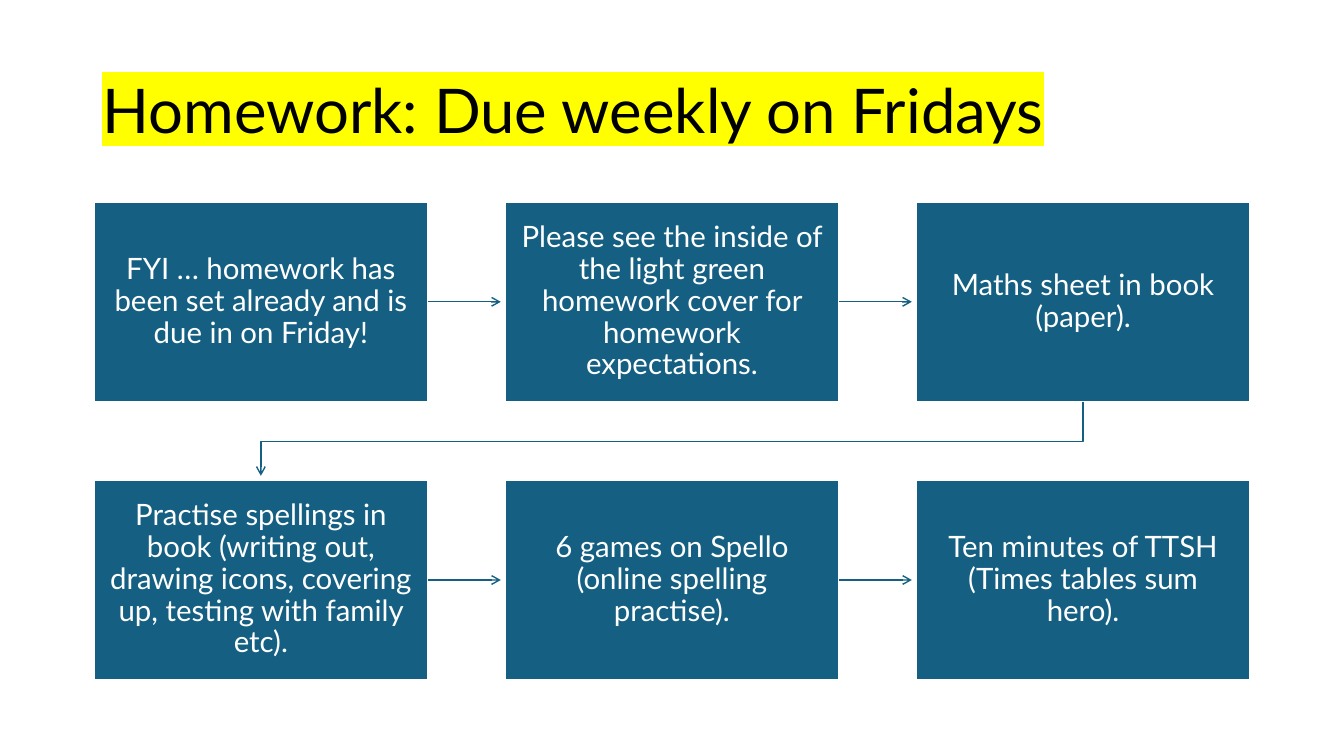
import pptx
import pptx.util
import pptx.dml.color
import pptx.enum.shapes
import pptx.enum.text
import pptx.oxml
import pptx.oxml.ns

Cm, Pt = pptx.util.Cm, pptx.util.Pt
RGBColor = pptx.dml.color.RGBColor
ALIGN = pptx.enum.text.PP_ALIGN
BLUE = RGBColor(0x15, 0x60, 0x82)
WHITE = RGBColor(0xFF, 0xFF, 0xFF)
BLACK = RGBColor(0, 0, 0)
YELLOW = RGBColor(0xFF, 0xFF, 0)
NS = pptx.oxml.ns.nsdecls("a")

# Grid of step boxes, in cm
LEFT, TOP = 2.36, 5.08
WIDE, HIGH = 8.43, 5.05
STEP_X, STEP_Y = 10.36, 7.01
COLS = 3
GAP = 0.1  # space between an arrow tip and its box

STEPS = [
    "FYI … homework has been set already and is due in on Friday!",
    "Please see the inside of the light green homework cover for homework expectations.",
    "Maths sheet in book (paper).",
    "Practise spellings in book (writing out, drawing icons, covering up, testing with family etc).",
    "6 games on Spello (online spelling practise).",
    "Ten minutes of TTSH (Times tables sum hero).",
]


def add_text(shape, text, size, color, align):
    frame = shape.text_frame
    frame.word_wrap = True
    frame.vertical_anchor = pptx.enum.text.MSO_ANCHOR.MIDDLE
    para = frame.paragraphs[0]
    para.alignment = align
    para.line_spacing = 0.9
    run = para.add_run()
    run.text = text
    run.font.name = "Lato"
    run.font.size = Pt(size)
    run.font.color.rgb = color
    return frame


def add_tip(line):
    line.line.color.rgb = BLUE
    line.line.width = Pt(1)
    props = line.element.spPr
    props.get_or_add_ln().append(pptx.oxml.parse_xml(f'<a:tailEnd {NS} type="arrow"/>'))
    props.append(pptx.oxml.parse_xml(f"<a:effectLst {NS}/>"))


deck = pptx.Presentation()
deck.slide_width, deck.slide_height = Cm(33.87), Cm(19.05)
slide = deck.slides.add_slide(deck.slide_layouts[6])
shapes = slide.shapes

# Title with highlight
title = shapes.add_textbox(Cm(2.33), Cm(1.01), Cm(29.21), Cm(3.68))
add_text(title, "Homework: Due weekly on Fridays", 44, BLACK, ALIGN.LEFT)
mark = f'<a:highlight {NS}><a:srgbClr val="{YELLOW}"/></a:highlight>'
title.element.xpath(".//a:latin")[0].addprevious(pptx.oxml.parse_xml(mark))

# Step boxes
boxes = []
for i, text in enumerate(STEPS):
    row, col = divmod(i, COLS)
    box = shapes.add_shape(
        pptx.enum.shapes.MSO_SHAPE.RECTANGLE,
        Cm(LEFT + col * STEP_X), Cm(TOP + row * STEP_Y), Cm(WIDE), Cm(HIGH))
    box.shadow.inherit = False
    box.fill.solid()
    box.fill.fore_color.rgb = BLUE
    box.line.color.rgb = WHITE
    box.line.width = Pt(1.5)
    frame = add_text(box, text, 21, WHITE, ALIGN.CENTER)
    frame.margin_left = frame.margin_right = Cm(0.41)
    frame.margin_top = frame.margin_bottom = Cm(0.43)
    boxes.append(box)

# Arrows along each row
for i, box in enumerate(boxes):
    if i % COLS == COLS - 1:
        continue
    mid = box.top + box.height // 2
    arrow = shapes.add_connector(
        pptx.enum.shapes.MSO_CONNECTOR.STRAIGHT,
        box.left + box.width, mid, boxes[i + 1].left - Cm(GAP), mid)
    arrow.begin_connect(box, 3)
    add_tip(arrow)

# Bent arrow from the first row to the second
last, first = boxes[COLS - 1], boxes[COLS]
start = last.left + last.width // 2
end = first.left + first.width // 2
bend = Cm(11.12)
path = shapes.build_freeform(start, last.top + last.height)
path.add_line_segments(
    [(start, bend), (end, bend), (end, first.top - Cm(GAP))], close=False)
turn = path.convert_to_shape()
turn.fill.background()
add_tip(turn)

deck.save("out.pptx")
